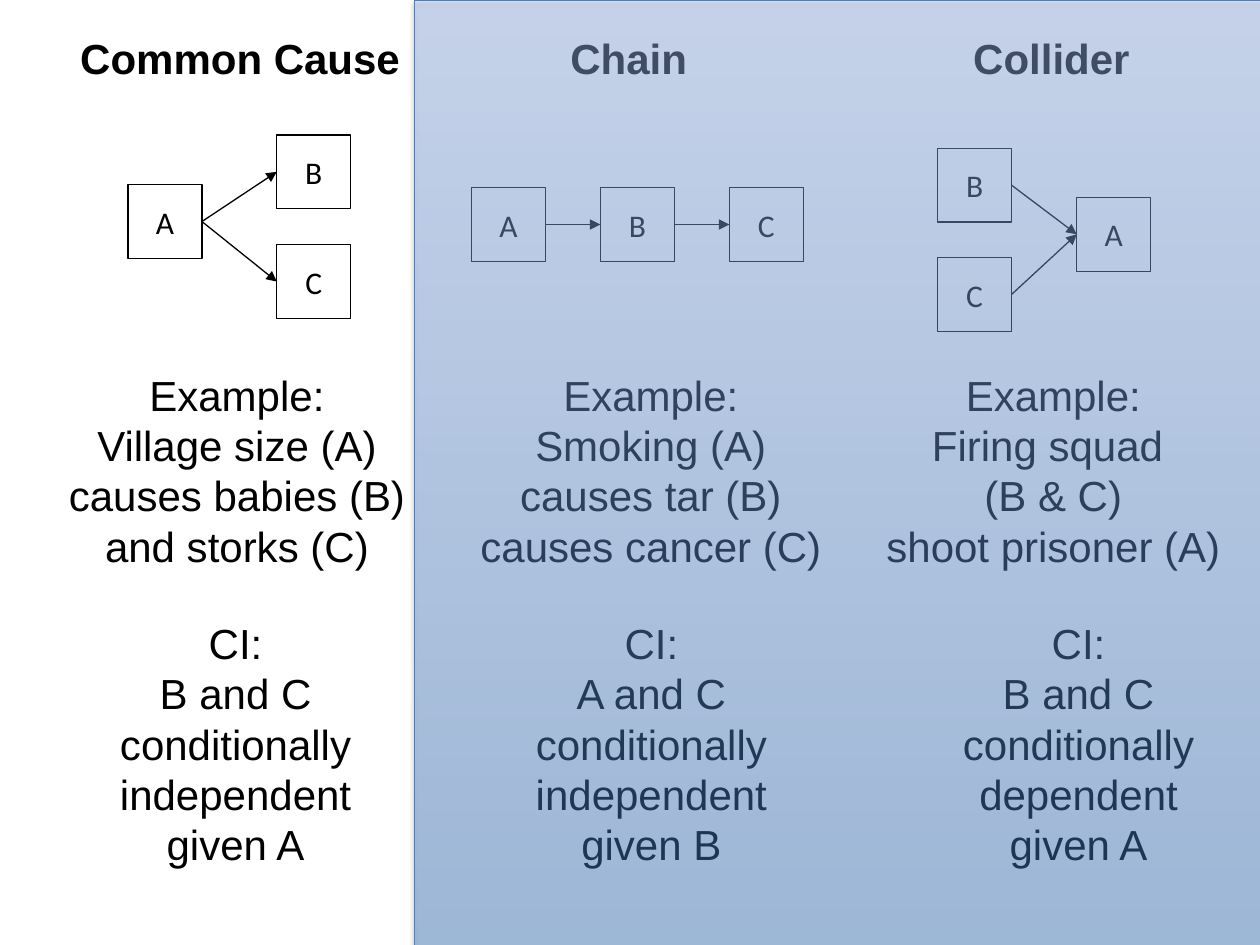
"""Build a slide comparing common cause, chain and collider structures."""
from lxml import etree
from pptx import Presentation
from pptx.dml.color import RGBColor
from pptx.enum.shapes import MSO_CONNECTOR, MSO_SHAPE
from pptx.enum.text import MSO_ANCHOR, MSO_AUTO_SIZE, PP_ALIGN
from pptx.oxml.ns import qn
from pptx.util import Pt

RECT = MSO_SHAPE.RECTANGLE
STRAIGHT = MSO_CONNECTOR.STRAIGHT
CENTER = PP_ALIGN.CENTER
MIDDLE = MSO_ANCHOR.MIDDLE
FIT_SHAPE = MSO_AUTO_SIZE.SHAPE_TO_FIT_TEXT
LEFT_SIDE, RIGHT_SIDE = 1, 3

BLACK = "000000"
NODE_SIZE = 42.2
TITLE_ROW = (15.1, 36.7)
EXAMPLE_ROW = (207.4, 123.8)
CI_ROW = (349.2, 152.6)
VEIL = (236.9, 0, 532.8, 550.8)
VEIL_STOPS = ("3F80CE", "A4C4FF")

STRUCTURES = [
    {
        "title": ("Common Cause", 137.2, 199.4),
        "nodes": {"A": (73.2, 105.5), "B": (158.2, 77.1), "C": (158.2, 139.8)},
        "arrows": ["AB", "AC"],
        "example": (["Example:", "Village size (A)", "causes babies (B)", "and storks (C)"], 135.4, 208.8),
        "ci": (["CI:", "B and C", "conditionally ", "independent", "given A"], 134.6, 149.8),
    },
    {
        "title": ("Chain", 359.3, 82.1),
        "nodes": {"A": (269.4, 107.2), "B": (343.1, 107.2), "C": (416.8, 107.2)},
        "arrows": ["AB", "BC"],
        "example": (["Example:", "Smoking (A)", "causes tar (B)", "causes cancer (C)"], 371.9, 211),
        "ci": (["CI:", "A and C", "conditionally ", "independent", "given B"], 372.2, 149.8),
    },
    {
        "title": ("Collider", 600.8, 104.4),
        "nodes": {"B": (535.8, 84.7), "C": (535.8, 147.2), "A": (615.3, 112.8)},
        "arrows": ["BA", "CA"],
        "example": (["Example:", "Firing squad ", "(B & C)", "shoot prisoner (A)"], 601.9, 207.4),
        "ci": (["CI:", "B and C", "conditionally ", "dependent", "given A"], 616.3, 149.8),
    },
]


def rgb(value):
    """Turn a hex string into a colour."""
    return RGBColor.from_string(value)


def write_lines(frame, lines, font_name, size, bold=False):
    """Fill a text frame with centred, unwrapped paragraphs."""
    frame.word_wrap = False
    for index, line in enumerate(lines):
        paragraph = frame.add_paragraph() if index else frame.paragraphs[0]
        paragraph.text = line
        paragraph.alignment = CENTER
        paragraph.font.name = font_name
        paragraph.font.size = Pt(size)
        paragraph.font.bold = bold
        paragraph.font.color.rgb = rgb(BLACK)


def add_lines(slide, lines, center, width, row, bold=False):
    """Add a text box centred on a column."""
    top, height = row
    box = slide.shapes.add_textbox(Pt(center - width / 2), Pt(top), Pt(width), Pt(height))
    write_lines(box.text_frame, lines, "Arial", 24, bold)
    box.text_frame.auto_size = FIT_SHAPE


def add_node(slide, label, left, top):
    """Add one square node of a diagram."""
    node = slide.shapes.add_shape(RECT, Pt(left), Pt(top), Pt(NODE_SIZE), Pt(NODE_SIZE))
    node.shadow.inherit = False
    node.fill.background()
    node.line.color.rgb = rgb(BLACK)
    node.line.width = Pt(0.75)
    write_lines(node.text_frame, [label], "Calibri", 18)
    node.text_frame.vertical_anchor = MIDDLE
    return node


def add_arrow(slide, cause, effect):
    """Join two nodes with an arrow from cause to effect."""
    arrow = slide.shapes.add_connector(STRAIGHT, 0, 0, 0, 0)
    arrow.begin_connect(cause, RIGHT_SIDE)
    arrow.end_connect(effect, LEFT_SIDE)
    arrow.line.color.rgb = rgb(BLACK)
    arrow.line.width = Pt(0.75)
    etree.SubElement(arrow.line._get_or_add_ln(), qn("a:tailEnd"), type="triangle")
    etree.SubElement(arrow._element.spPr, qn("a:effectLst"))


def add_veil(slide):
    """Cover the second and third columns with a translucent gradient."""
    veil = slide.shapes.add_shape(RECT, *map(Pt, VEIL))
    veil.shadow.inherit = False
    veil.line.color.rgb = rgb("4B7EBC")
    veil.line.width = Pt(0.75)
    veil.fill.gradient()
    veil.fill.gradient_angle = 90
    for stop, color in zip(veil.fill.gradient_stops, VEIL_STOPS):
        stop.color.rgb = rgb(color)
    properties = veil._element.spPr
    for color in properties.find(qn("a:gradFill")).iter(qn("a:srgbClr")):
        etree.SubElement(color, qn("a:alpha"), val="40000")
    shadow = etree.SubElement(
        properties.find(qn("a:effectLst")), qn("a:outerShdw"),
        blurRad=str(Pt(3.1)), dist=str(Pt(1.8)), dir="5400000", rotWithShape="0")
    shade = etree.SubElement(shadow, qn("a:srgbClr"), val=BLACK)
    etree.SubElement(shade, qn("a:alpha"), val="35000")


def main():
    """Lay out the three structures and save the slide."""
    deck = Presentation()
    deck.slide_width, deck.slide_height = Pt(720), Pt(540)
    slide = deck.slides.add_slide(deck.slide_layouts[6])
    for structure in STRUCTURES:
        nodes = {label: add_node(slide, label, *corner)
                 for label, corner in structure["nodes"].items()}
        for cause, effect in structure["arrows"]:
            add_arrow(slide, nodes[cause], nodes[effect])
        title, center, width = structure["title"]
        add_lines(slide, [title], center, width, TITLE_ROW, bold=True)
        add_lines(slide, *structure["example"], EXAMPLE_ROW)
        add_lines(slide, *structure["ci"], CI_ROW)
    add_veil(slide)
    deck.save("out.pptx")


if __name__ == "__main__":
    main()
